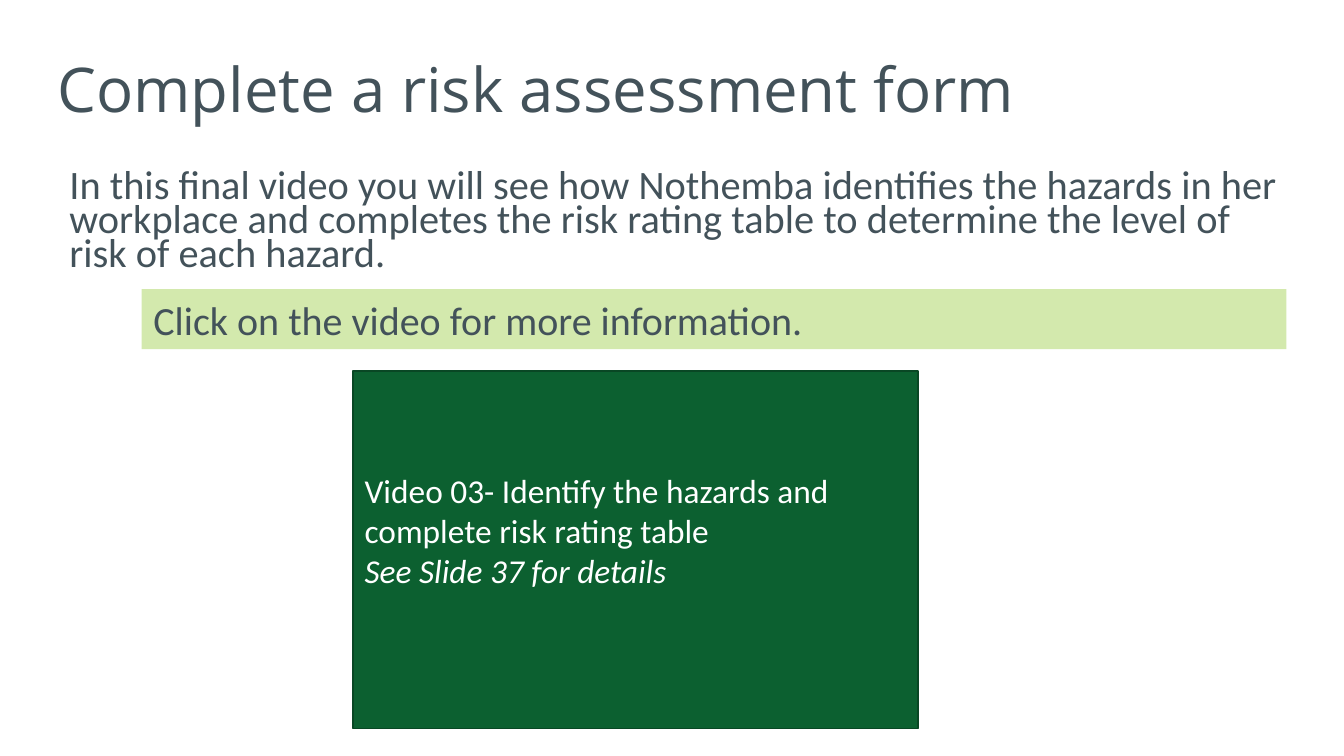
from pptx import Presentation
from pptx.dml.color import RGBColor
from pptx.enum.shapes import MSO_SHAPE
from pptx.enum.text import MSO_ANCHOR, PP_ALIGN
from pptx.util import Inches, Pt

RECT = MSO_SHAPE.RECTANGLE
LEFT = PP_ALIGN.LEFT
TOP, MIDDLE = MSO_ANCHOR.TOP, MSO_ANCHOR.MIDDLE

WIDTH, HEIGHT = 11.2, 6.3
TITLE_ONLY = 5
SLATE, WHITE = "43525A", "FFFFFF"
PALE_GREEN, GREEN, DARK_GREEN = "D3E9AD", "0C6030", "094724"


def colour(hex_value):
    return RGBColor.from_string(hex_value)


def box(left, top, width, height):
    """Turn percentages of the slide's size into lengths."""
    return (Inches(WIDTH * left / 100), Inches(HEIGHT * top / 100),
            Inches(WIDTH * width / 100), Inches(HEIGHT * height / 100))


def write(sp, lines, size, font="Calibri", ink=SLATE, anchor=TOP, spacing=1.0):
    tf = sp.text_frame
    tf.word_wrap = True
    tf.vertical_anchor = anchor
    tf.text = "\n".join(lines)
    for p in tf.paragraphs:
        p.alignment = LEFT
        p.line_spacing = spacing
        p.font.name = font
        p.font.size = Pt(size)
        p.font.color.rgb = colour(ink)
    return tf


def add_title(s, text):
    sp = s.shapes.title
    sp.left, sp.top, sp.width, sp.height = box(3.39, 2.54, 94.38, 19.37)
    write(sp, [text], 37, font="Open Sans", anchor=MIDDLE, spacing=0.9)


def add_intro(s, text):
    sp = s.shapes.add_textbox(*box(4.29, 22.06, 92.14, 15))
    tf = write(sp, [text], 24.2, spacing=0.7)
    tf.paragraphs[0].space_before = Pt(8.4)


def add_panel(s, place, fill, line=None):
    sp = s.shapes.add_shape(RECT, *box(*place))
    sp.shadow.inherit = False
    sp.fill.solid()
    sp.fill.fore_color.rgb = colour(fill)
    if line:
        sp.line.color.rgb = colour(line)
        sp.line.width = Pt(1)
    else:
        sp.line.fill.background()
    return sp


def add_video_panel(s, caption, reference):
    sp = add_panel(s, (26.25, 49.05, 42.05, 47.3), GREEN, DARK_GREEN)
    tf = write(sp, [caption, reference], 20, ink=WHITE, anchor=MIDDLE)
    tf.margin_bottom = Inches(0.38)
    tf.paragraphs[1].font.italic = True


def main():
    prs = Presentation()
    prs.slide_width, prs.slide_height = Inches(WIDTH), Inches(HEIGHT)
    s = prs.slides.add_slide(prs.slide_layouts[TITLE_ONLY])
    add_title(s, "Complete a risk assessment form")
    add_intro(s, "In this final video you will see how Nothemba identifies the "
                 "hazards in her workplace and completes the risk rating table "
                 "to determine the level of risk of each hazard.")
    prompt = add_panel(s, (10.54, 38.25, 85.18, 7.94), PALE_GREEN)
    write(prompt, ["Click on the video for more information."], 24)
    add_video_panel(s, "Video 03- Identify the hazards and complete risk rating table",
                    "See Slide 37 for details")
    prs.save("out.pptx")


if __name__ == "__main__":
    main()
